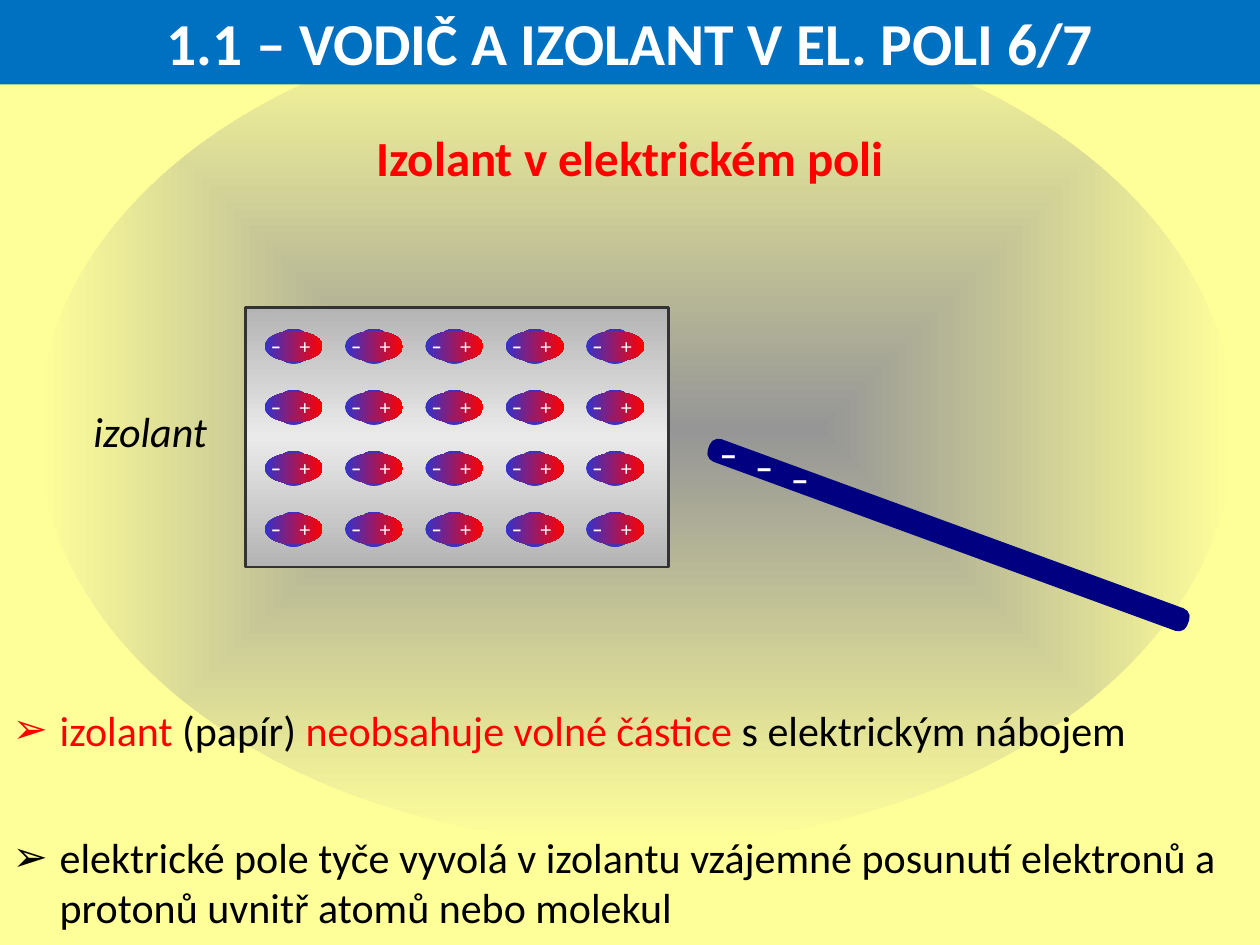
import dataclasses
import typing

import lxml.etree
import pptx
import pptx.dml.color
import pptx.enum.shapes
import pptx.enum.text
import pptx.oxml
import pptx.oxml.ns
import pptx.util

Cm = pptx.util.Cm
Pt = pptx.util.Pt
MSO_SHAPE = pptx.enum.shapes.MSO_SHAPE
PP_ALIGN = pptx.enum.text.PP_ALIGN
MSO_ANCHOR = pptx.enum.text.MSO_ANCHOR


@dataclasses.dataclass(frozen=True)
class Theme:
    background: str = "FFFF99"
    glow: str = "969696"
    bar: str = "0070C0"
    accent: str = "FF0000"
    text: str = "000000"
    light: str = "FFFFFF"
    positive: str = "FF0000"
    negative: str = "3333CC"
    rod: str = "000080"
    block_edge: str = "333333"
    block_dark: str = "B4B4B4"
    block_light: str = "EAEAEA"
    font: str = "Calibri"
    symbol_font: str = "Montserrat"
    title_size: float = 34
    subtitle_size: float = 28
    body_size: float = 24
    minus_size: float = 16
    plus_size: float = 13
    rod_charge_size: float = 28


THEME = Theme()


class Box(typing.NamedTuple):
    """Left, top, width and height in centimetres."""
    left: float
    top: float
    width: float
    height: float

    def lengths(self) -> list:
        return [Cm(value) for value in self]


class Piece(typing.NamedTuple):
    """A stretch of text in one style."""
    text: str
    size: float = THEME.body_size
    color: str = THEME.text
    font: str = THEME.font
    bold: bool = False
    italic: bool = False


def centred(x: float, y: float, width: float, height: float) -> Box:
    return Box(x - width / 2, y - height / 2, width, height)


def rgb(color: str) -> pptx.dml.color.RGBColor:
    return pptx.dml.color.RGBColor.from_string(color)


def place(shape, box: Box) -> None:
    shape.left, shape.top, shape.width, shape.height = box.lengths()


def write(paragraph, *pieces: Piece) -> None:
    for piece in pieces:
        run = paragraph.add_run()
        run.text = piece.text
        run.font.size = Pt(piece.size)
        run.font.name = piece.font
        run.font.bold = piece.bold
        run.font.italic = piece.italic
        run.font.color.rgb = rgb(piece.color)


def add_text(slide, box: Box, *pieces: Piece, alignment=PP_ALIGN.LEFT):
    text_box = slide.shapes.add_textbox(*box.lengths())
    text_box.text_frame.word_wrap = True
    paragraph = text_box.text_frame.paragraphs[0]
    paragraph.alignment = alignment
    write(paragraph, *pieces)
    return paragraph


def add_shape(slide, kind, box: Box, line: typing.Optional[str] = None):
    shape = slide.shapes.add_shape(kind, *box.lengths())
    shape.shadow.inherit = False
    if line:
        shape.line.color.rgb = rgb(line)
        shape.line.width = Pt(1.5)
    else:
        shape.line.fill.background()
    return shape


def fill_gradient(shape, colors: typing.Sequence[str], angle: typing.Optional[int] = None) -> None:
    """Spread the colours evenly along an angle, or from the centre if there is none."""
    stops = "".join(
        f'<a:gs pos="{index * 100000 // (len(colors) - 1)}"><a:srgbClr val="{color}"/></a:gs>'
        for index, color in enumerate(colors)
    )
    if angle is None:
        direction = ('<a:path path="shape"><a:fillToRect l="50000" t="50000" '
                     'r="50000" b="50000"/></a:path>')
    else:
        direction = f'<a:lin ang="{angle * 60000}" scaled="1"/>'
    gradient = pptx.oxml.parse_xml(
        f'<a:gradFill {pptx.oxml.ns.nsdecls("a")} rotWithShape="1">'
        f"<a:gsLst>{stops}</a:gsLst>{direction}</a:gradFill>"
    )
    shape.element.spPr.find(pptx.oxml.ns.qn("a:prstGeom")).addnext(gradient)


def set_bullet(paragraph, character: str) -> None:
    properties = paragraph._p.get_or_add_pPr()
    properties.set("marL", str(Cm(0.95)))
    properties.set("indent", str(Cm(-0.95)))
    bullet = lxml.etree.SubElement(properties, pptx.oxml.ns.qn("a:buChar"))
    bullet.set("char", character)


def set_tab(paragraph, position: float) -> None:
    properties = paragraph._p.get_or_add_pPr()
    tabs = lxml.etree.SubElement(properties, pptx.oxml.ns.qn("a:tabLst"))
    tab = lxml.etree.SubElement(tabs, pptx.oxml.ns.qn("a:tab"))
    tab.set("pos", str(Cm(position)))
    tab.set("algn", "l")


def add_glow(slide) -> None:
    glow = add_shape(slide, MSO_SHAPE.OVAL, Box(0.76, 0.28, 24.13, 16.74))
    fill_gradient(glow, [THEME.glow, THEME.background])
    glow.element.getparent().insert(2, glow.element)  # behind the placeholders


def fill_title(title) -> None:
    place(title, Box(0, 0, 25.4, 1.7))
    title.fill.solid()
    title.fill.fore_color.rgb = rgb(THEME.bar)
    title.text_frame.auto_size = pptx.enum.text.MSO_AUTO_SIZE.NONE
    title.text_frame.vertical_anchor = MSO_ANCHOR.MIDDLE
    paragraph = title.text_frame.paragraphs[0]
    paragraph.alignment = PP_ALIGN.CENTER
    write(paragraph, Piece("1.1 – VODIČ A IZOLANT V EL. POLI 6/7",
                           THEME.title_size, THEME.light, bold=True))


def fill_body(body) -> None:
    place(body, Box(0, 13.56, 25.4, 5.38))
    frame = body.text_frame
    frame.auto_size = pptx.enum.text.MSO_AUTO_SIZE.NONE
    frame.vertical_anchor = MSO_ANCHOR.TOP
    items = [
        (1.5, 0, [Piece("izolant", color=THEME.accent), Piece(" (papír) "),
                  Piece("neobsahuje volné částice ", color=THEME.accent),
                  Piece("s elektrickým nábojem")]),
        (1.0, 44, [Piece("elektrické pole tyče vyvolá v izolantu vzájemné posunutí "
                         "elektronů a protonů uvnitř atomů nebo molekul")]),
    ]
    for index, (line_spacing, space_before, pieces) in enumerate(items):
        paragraph = frame.add_paragraph() if index else frame.paragraphs[0]
        paragraph.line_spacing = line_spacing
        paragraph.space_before = Pt(space_before)
        set_bullet(paragraph, "➢")
        write(paragraph, *pieces)


def add_molecule(slide, x: float, y: float) -> None:
    """Draw a polarised molecule centred at x, y."""
    core = add_shape(slide, MSO_SHAPE.OVAL, centred(x, y, 0.71, 0.71))
    fill_gradient(core, [THEME.positive, THEME.negative])
    shell = add_shape(slide, MSO_SHAPE.OVAL, centred(x, y, 1.17, 0.61))
    fill_gradient(shell, [THEME.negative, THEME.positive], angle=0)
    charges = add_text(
        slide, centred(x + 0.02, y - 0.03, 1.47, 0.94),
        Piece("-", THEME.minus_size, THEME.light, THEME.symbol_font),
        Piece("\t+", THEME.plus_size, THEME.light, THEME.symbol_font))
    set_tab(charges, 0.56)


def add_insulator(slide) -> None:
    block = add_shape(slide, MSO_SHAPE.RECTANGLE, Box(4.95, 6.2, 8.53, 5.23), THEME.block_edge)
    fill_gradient(block, [THEME.block_dark, THEME.block_light, THEME.block_dark], angle=90)
    for column in range(5):
        for row in range(4):
            add_molecule(slide, 5.92 + 1.62 * column, 6.98 + 1.23 * row)
    add_text(slide, Box(1.43, 8.05, 3.2, 1.3), Piece("izolant", italic=True),
             alignment=PP_ALIGN.CENTER)


def add_rod(slide) -> None:
    rod = add_shape(slide, MSO_SHAPE.ROUNDED_RECTANGLE, Box(14, 10.57, 10.24, 0.43), THEME.rod)
    rod.adjustments[0] = 0.38
    rod.rotation = 200.1
    rod.fill.solid()
    rod.fill.fore_color.rgb = rgb(THEME.rod)
    for index in range(3):
        add_text(slide, Box(14.25 + 0.72 * index, 8.38 + 0.25 * index, 0.84, 1.45),
                 Piece("-", THEME.rod_charge_size, THEME.light, THEME.symbol_font))


def main() -> None:
    presentation = pptx.Presentation()
    presentation.slide_width, presentation.slide_height = Cm(25.4), Cm(19.05)
    slide = presentation.slides.add_slide(presentation.slide_layouts[1])
    slide.background.fill.solid()
    slide.background.fill.fore_color.rgb = rgb(THEME.background)
    add_glow(slide)
    fill_title(slide.shapes.title)
    fill_body(slide.placeholders[1])
    add_insulator(slide)
    add_rod(slide)
    add_text(slide, Box(0, 2.44, 25.4, 1.45),
             Piece("Izolant v elektrickém poli", THEME.subtitle_size, THEME.accent, bold=True),
             alignment=PP_ALIGN.CENTER)
    presentation.save("out.pptx")


if __name__ == "__main__":
    main()
